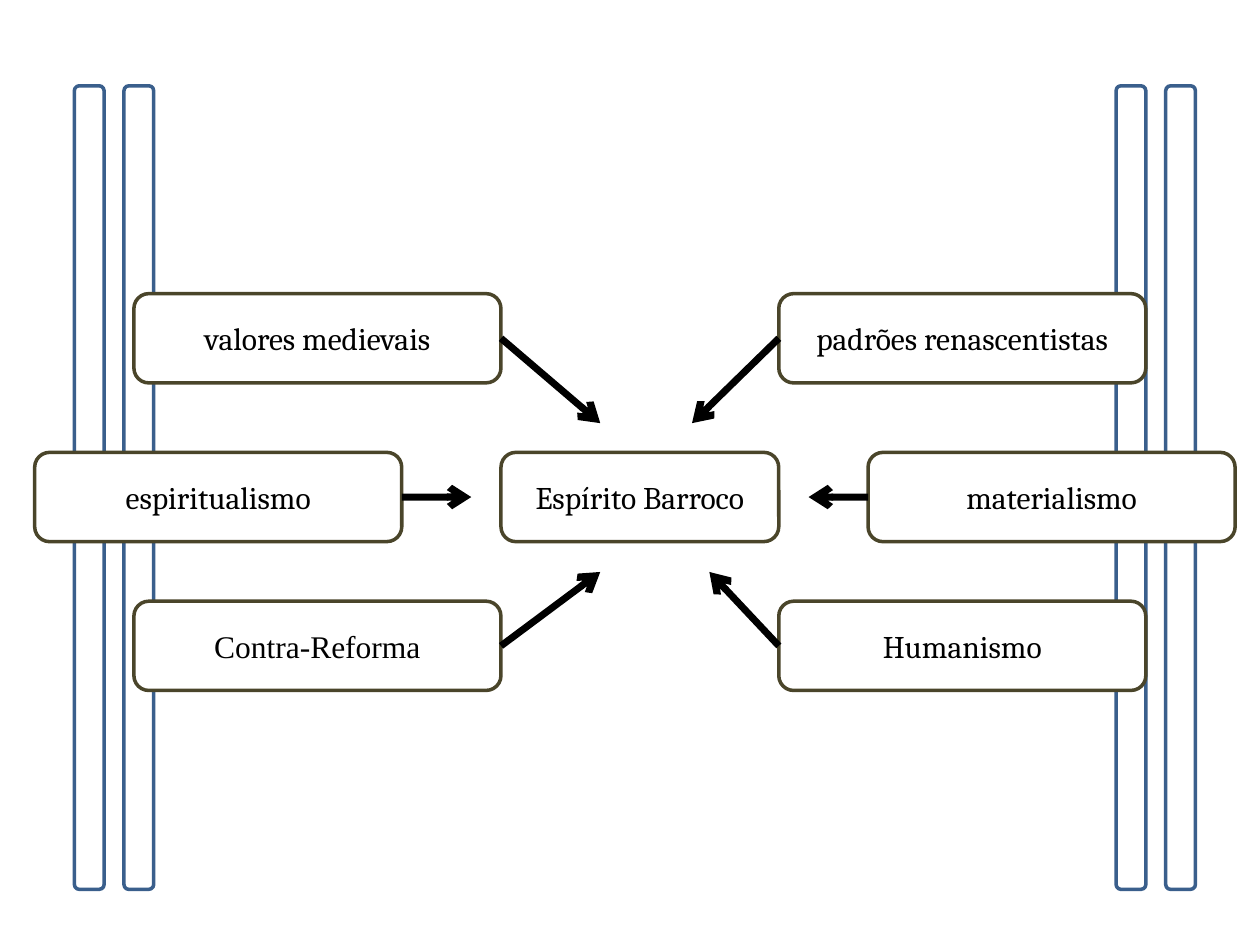
"""Build a slide showing the opposing ideas that lead to the Baroque spirit."""

from dataclasses import dataclass

import pptx
import pptx.dml.color
import pptx.enum.shapes
import pptx.enum.text
import pptx.oxml.ns
import pptx.shapes.autoshape
import pptx.slide
import pptx.util
from lxml import etree

Cm = pptx.util.Cm
Pt = pptx.util.Pt
RGBColor = pptx.dml.color.RGBColor

WHITE = RGBColor(0xFF, 0xFF, 0xFF)
BLACK = RGBColor(0x00, 0x00, 0x00)
BLUE = RGBColor(0x3A, 0x5F, 0x8C)
OLIVE = RGBColor(0x4A, 0x45, 0x2A)

BAR_LEFTS = (22.5, 23.5, 1.5, 2.5)
BOX_WIDTH, BOX_HEIGHT = 7.4, 1.8
TOP_ROW, MIDDLE_ROW, BOTTOM_ROW = 5.92, 9.12, 12.12
LEFT_SIDE, RIGHT_SIDE = 1, 3


@dataclass(frozen=True)
class Idea:
    text: str
    left: float
    top: float
    side: int
    tip: tuple[float, float]
    font: str = "Cambria"


IDEAS = (
    Idea("valores medievais", 2.7, TOP_ROW, RIGHT_SIDE, (12.1, 8.53)),
    Idea("padrões renascentistas", 15.7, TOP_ROW, LEFT_SIDE, (13.95, 8.53)),
    Idea("espiritualismo", 0.7, MIDDLE_ROW, RIGHT_SIDE, (9.5, 10.02)),
    Idea("materialismo", 17.5, MIDDLE_ROW, LEFT_SIDE, (16.3, 10.02)),
    Idea("Contra-Reforma", 2.7, BOTTOM_ROW, RIGHT_SIDE, (12.1, 11.53), "Times New Roman"),
    Idea("Humanismo", 15.7, BOTTOM_ROW, LEFT_SIDE, (14.3, 11.53)),
)


def add_panel(
    slide: pptx.slide.Slide, left: float, top: float, width: float, height: float, color: RGBColor
) -> pptx.shapes.autoshape.Shape:
    shape = slide.shapes.add_shape(
        pptx.enum.shapes.MSO_SHAPE.ROUNDED_RECTANGLE, Cm(left), Cm(top), Cm(width), Cm(height)
    )
    shape.shadow.inherit = False
    shape.fill.solid()
    shape.fill.fore_color.rgb = WHITE
    shape.line.color.rgb = color
    shape.line.width = Pt(2)
    return shape


def add_box(
    slide: pptx.slide.Slide, text: str, left: float, top: float, width: float, font: str = "Cambria"
) -> pptx.shapes.autoshape.Shape:
    box = add_panel(slide, left, top, width, BOX_HEIGHT, OLIVE)
    box.text_frame.vertical_anchor = pptx.enum.text.MSO_ANCHOR.MIDDLE
    paragraph = box.text_frame.paragraphs[0]
    paragraph.text = text
    paragraph.alignment = pptx.enum.text.PP_ALIGN.CENTER
    paragraph.font.name = font
    paragraph.font.size = Pt(18)
    paragraph.font.color.rgb = BLACK
    return box


def add_arrow(slide: pptx.slide.Slide, box: pptx.shapes.autoshape.Shape, idea: Idea) -> None:
    tip_x, tip_y = (Cm(value) for value in idea.tip)
    arrow = slide.shapes.add_connector(
        pptx.enum.shapes.MSO_CONNECTOR.STRAIGHT, tip_x, tip_y, tip_x, tip_y
    )
    arrow.begin_connect(box, idea.side)
    arrow.line.color.rgb = BLACK
    arrow.line.width = Pt(4)
    properties = arrow.element.spPr
    line = properties.find(pptx.oxml.ns.qn("a:ln"))
    etree.SubElement(line, pptx.oxml.ns.qn("a:tailEnd"), type="arrow")
    etree.SubElement(properties, pptx.oxml.ns.qn("a:effectLst"))


def main() -> None:
    presentation = pptx.Presentation()
    presentation.slide_width = Cm(25.4)
    presentation.slide_height = Cm(19.05)
    slide = presentation.slides.add_slide(presentation.slide_layouts[6])
    for left in BAR_LEFTS:
        add_panel(slide, left, 1.73, 0.6, 16.2, BLUE)
    add_box(slide, "Espírito Barroco", 10.1, MIDDLE_ROW, 5.6)
    for idea in IDEAS:
        box = add_box(slide, idea.text, idea.left, idea.top, BOX_WIDTH, idea.font)
        add_arrow(slide, box, idea)
    presentation.save("out.pptx")


if __name__ == "__main__":
    main()
